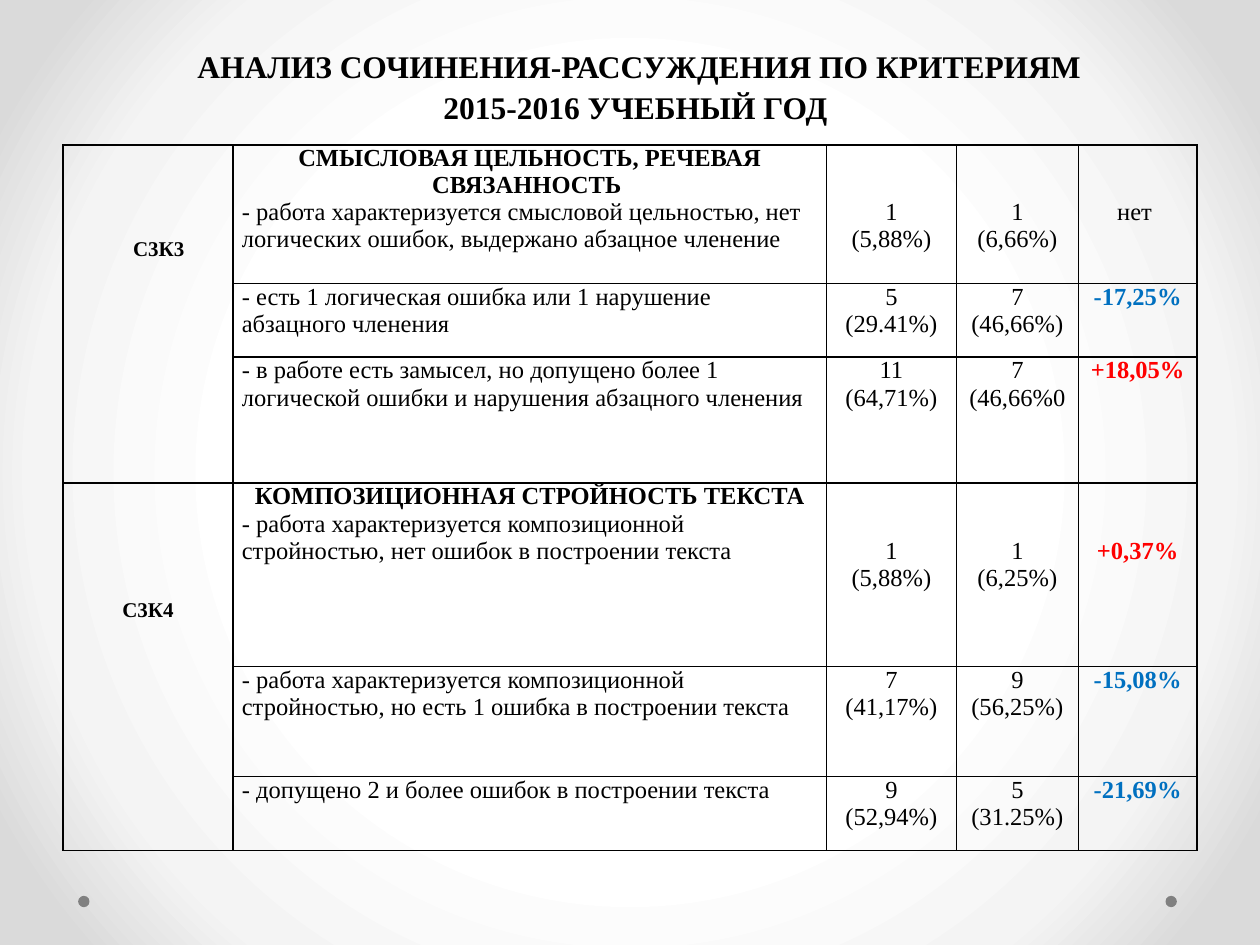
import pptx
import pptx.util
import pptx.oxml
import pptx.oxml.ns
import pptx.dml.color
import pptx.enum.shapes
import pptx.enum.text

COLOURS = {
    "ink": "000000",
    "rise": "FF0000",
    "fall": "0070C0",
    "dot": "808080",
    "centre": "FFFFFF",
    "ring": "F4F4F4",
    "edge": "DADADA",
}
ALIGN = pptx.enum.text.PP_ALIGN
FORMATS = {
    "title": {"size": 18, "bold": True, "colour": "ink", "alignment": ALIGN.CENTER, "line_spacing": 1.1},
    "label": {"size": 12, "bold": True, "colour": "ink", "alignment": ALIGN.CENTER},
    "heading": {"size": 14, "bold": True, "colour": "ink", "alignment": ALIGN.CENTER},
    "criterion": {"size": 14, "bold": False, "colour": "ink", "alignment": ALIGN.LEFT},
    "count": {"size": 14, "bold": False, "colour": "ink", "alignment": ALIGN.CENTER},
    "rise": {"size": 14, "bold": True, "colour": "rise", "alignment": ALIGN.CENTER},
    "fall": {"size": 14, "bold": True, "colour": "fall", "alignment": ALIGN.CENTER},
}
COLUMN_WIDTHS = [13.5, 47.1, 10.3, 9.7, 9.4]
RESULTS = [
    (11, 4.3, "СМЫСЛОВАЯ ЦЕЛЬНОСТЬ, РЕЧЕВАЯ СВЯЗАННОСТЬ ",
     "- работа характеризуется смысловой цельностью, нет логических ошибок, выдержано абзацное членение",
     ["1", "(5,88%)"], ["1", "(6,66%)"], "нет", "count"),
    (5.85, 0, None, "- есть 1 логическая ошибка или 1 нарушение абзацного членения",
     ["5", "(29.41%)"], ["7", "(46,66%)"], "-17,25%", "fall"),
    (10, 0, None, "- в работе есть замысел, но допущено более 1 логической ошибки и нарушения абзацного членения",
     ["11", "(64,71%)"], ["7", "(46,66%0"], "+18,05%", "rise"),
    (14.55, 4.3, "КОМПОЗИЦИОННАЯ СТРОЙНОСТЬ ТЕКСТА",
     "- работа характеризуется композиционной стройностью, нет ошибок в построении текста",
     ["1", "(5,88%)"], ["1", "(6,25%)"], "+0,37%", "rise"),
    (8.75, 0, None,
     "- работа характеризуется композиционной стройностью, но есть 1 ошибка в построении текста",
     ["7", "(41,17%)"], ["9", "(56,25%)"], "-15,08%", "fall"),
    (5.85, 0, None, "- допущено 2 и более ошибок в построении текста",
     ["9", "(52,94%)"], ["5", "(31.25%)"], "-21,69%", "fall"),
]


class SlideBuilder:
    font_name = "Times New Roman"
    columns, rows = 100, 75
    inset = 0.7

    def __init__(self, deck):
        self.deck = deck
        self.page = deck.slides.add_slide(deck.slide_layouts[6])

    def across(self, count):
        return round(self.deck.slide_width * count / self.columns)

    def down(self, count):
        return round(self.deck.slide_height * count / self.rows)

    def area(self, left, top, width, height):
        return self.across(left), self.down(top), self.across(width), self.down(height)

    def colour(self, name):
        return pptx.dml.color.RGBColor.from_string(COLOURS[name])

    def background(self, stops):
        self.page.background.fill.solid()
        holder = self.page._element.find(".//" + pptx.oxml.ns.qn("p:bgPr"))
        marks = "".join(
            f'<a:gs pos="{share * 1000}"><a:srgbClr val="{COLOURS[name]}"/></a:gs>'
            for share, name in stops
        )
        holder.replace(holder[0], pptx.oxml.parse_xml(
            f'<a:gradFill {pptx.oxml.ns.nsdecls("a")} rotWithShape="1"><a:gsLst>{marks}</a:gsLst>'
            '<a:path path="circle"><a:fillToRect l="50000" t="50000" r="50000" b="50000"/>'
            '</a:path></a:gradFill>'
        ))

    def add_lines(self, frame, lines):
        for number, (text, style) in enumerate(lines):
            para = frame.add_paragraph() if number else frame.paragraphs[0]
            span = para.add_run()
            span.text = text
            span.font.name = self.font_name
            for key, value in FORMATS[style].items():
                if key == "colour":
                    span.font.color.rgb = self.colour(value)
                elif key == "size":
                    span.font.size = pptx.util.Pt(value)
                elif key == "bold":
                    span.font.bold = value
                else:
                    setattr(para, key, value)

    def text(self, place, lines):
        frame = self.page.shapes.add_textbox(*self.area(*place)).text_frame
        frame.word_wrap = True
        frame.auto_size = pptx.enum.text.MSO_AUTO_SIZE.SHAPE_TO_FIT_TEXT
        self.add_lines(frame, lines)

    def dot(self, left, top, size):
        shape = self.page.shapes.add_shape(
            pptx.enum.shapes.MSO_SHAPE.OVAL, *self.area(left, top, size, size))
        shape.shadow.inherit = False
        shape.fill.solid()
        shape.fill.fore_color.rgb = self.colour("dot")
        shape.line.fill.background()

    def table(self, left, top, widths, heights):
        place = self.area(left, top, sum(widths), sum(heights))
        table = self.page.shapes.add_table(len(heights), len(widths), *place).table
        table.first_row = table.horz_banding = False
        for column, width in zip(table.columns, widths):
            column.width = self.across(width)
        for row, height in zip(table.rows, heights):
            row.height = self.down(height)
        for cell in table.iter_cells():
            cell.fill.background()
            self.border(cell)
        return table

    def border(self, cell):
        properties = cell._tc.get_or_add_tcPr()
        for position, side in enumerate("LRTB"):
            properties.insert(position, pptx.oxml.parse_xml(
                f'<a:ln{side} {pptx.oxml.ns.nsdecls("a")} w="{pptx.util.Pt(1)}"><a:solidFill>'
                f'<a:srgbClr val="{COLOURS["ink"]}"/></a:solidFill></a:ln{side}>'
            ))

    def cell(self, cell, lines, drop=0, extra_left=0, extra_right=0):
        margins = {
            "margin_left": self.across(self.inset + extra_left),
            "margin_right": self.across(self.inset + extra_right),
            "margin_top": self.down(drop),
            "margin_bottom": 0,
        }
        for key, value in margins.items():
            setattr(cell, key, value)
        self.add_lines(cell.text_frame, lines)


def main():
    deck = pptx.Presentation()
    deck.slide_width = pptx.util.Inches(10)
    deck.slide_height = pptx.util.Inches(7.5)
    builder = SlideBuilder(deck)
    builder.background([(50, "centre"), (76, "ring"), (92, "edge")])
    for left in (6.2, 92.5):
        builder.dot(left, 71.1, 0.9)
    builder.text((9.8, 2.9, 81.9, 7.1), [
        ("АНАЛИЗ СОЧИНЕНИЯ-РАССУЖДЕНИЯ ПО КРИТЕРИЯМ", "title"),
        ("2015-2016 УЧЕБНЫЙ ГОД ", "title"),
    ])
    table = builder.table(5, 11.5, COLUMN_WIDTHS, [result[0] for result in RESULTS])
    for first, label, drop, shift in ((0, "С3К3", 7.4, 1.7), (3, "С3К4", 9.2, 0)):
        table.cell(first, 0).merge(table.cell(first + 2, 0))
        builder.cell(table.cell(first, 0), [(label, "label")], drop, shift)
    for row, (_, drop, heading, criterion, earlier, later, change, trend) in enumerate(RESULTS):
        lines = [(heading, "heading")] if heading else []
        builder.cell(table.cell(row, 1), lines + [(criterion, "criterion")])
        for column, values in ((2, earlier), (3, later)):
            builder.cell(table.cell(row, column), [(value, "count") for value in values], drop)
        builder.cell(table.cell(row, 4), [(change, trend)], drop,
                     extra_right=0.5 if trend == "count" else 0)
    deck.save("out.pptx")


if __name__ == "__main__":
    main()
